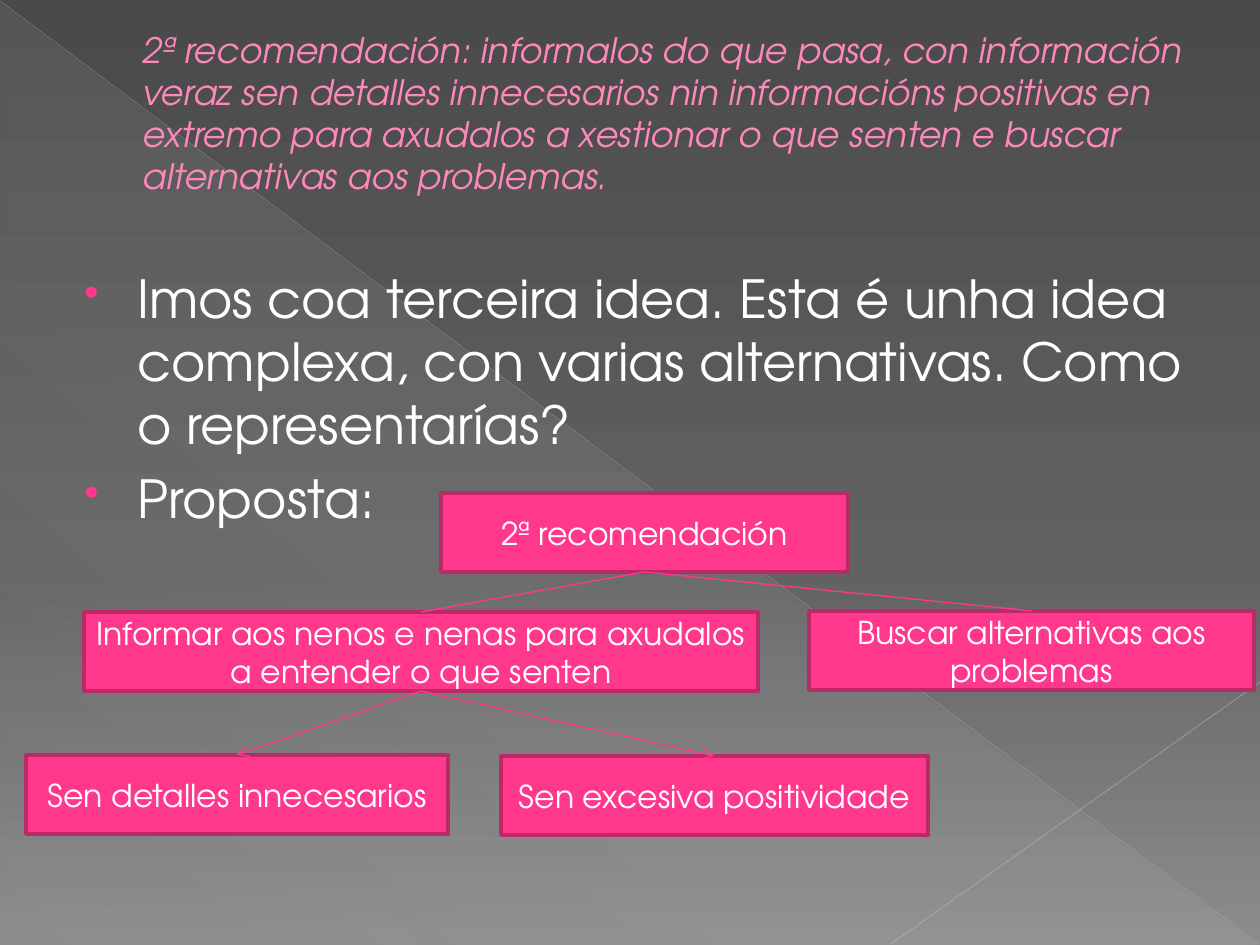
from lxml import etree
from pptx import Presentation
from pptx.dml.color import RGBColor
from pptx.enum.shapes import MSO_CONNECTOR, MSO_SHAPE
from pptx.enum.text import MSO_ANCHOR, PP_ALIGN
from pptx.oxml import parse_xml
from pptx.oxml.ns import nsdecls, qn
from pptx.util import Emu, Pt

RECT, TRI = MSO_SHAPE.RECTANGLE, MSO_SHAPE.RIGHT_TRIANGLE
LINE = MSO_CONNECTOR.STRAIGHT
MID, TOP = MSO_ANCHOR.MIDDLE, MSO_ANCHOR.TOP
LEFT, CENTER = PP_ALIGN.LEFT, PP_ALIGN.CENTER

WHITE = RGBColor(0xFF, 0xFF, 0xFF)
PINK = RGBColor(0xFF, 0x38, 0x8C)
ROSE = RGBColor(0xFF, 0x88, 0xBA)
EDGE = RGBColor(0xBD, 0x29, 0x68)
DARK = RGBColor(0x4A, 0x4A, 0x4A)
GRAY = RGBColor(0x62, 0x62, 0x62)
PALE = RGBColor(0x8C, 0x8C, 0x8C)
SHEEN = RGBColor(0xD2, 0xD2, 0xD2)
RAY1 = RGBColor(0xBF, 0xBF, 0xBF)
RAY2 = RGBColor(0xC6, 0xC6, 0xC6)

FONT = "TeX Gyre Adventor"
SCALE = 914400 / 126
BOX_H = 79

TITLE = ("2ª recomendación: informalos do que pasa, con información veraz "
         "sen detalles innecesarios nin informacións positivas en extremo "
         "para axudalos a xestionar o que senten e buscar alternativas aos "
         "problemas.")
IDEAS = ["Imos coa terceira idea. Esta é unha idea complexa, con varias "
         "alternativas. Como o representarías?",
         "Proposta:"]

# name: (left, top, width, text)
NODES = {
    "root": (441, 493, 407, "2ª recomendación"),
    "inform": (84, 612, 674,
               "Informar aos nenos e nenas para axudalos a entender o que senten"),
    "detail": (26, 755, 422, "Sen detalles innecesarios"),
    "upbeat": (501, 756, 427, "Sen excesiva positividade"),
    "search": (809, 611, 445, "Buscar alternativas aos problemas"),
}
# from, to, arrowhead
LINKS = [("root", "inform", False), ("inform", "detail", True),
         ("inform", "upbeat", True), ("root", "search", False)]


def px(*vals):
    return [Emu(round(v * SCALE)) for v in vals]


def put(obj, **vals):
    for key, val in vals.items():
        setattr(obj, key, val)


def shade(item, stops, angle):
    """Swap the solid fill of an element for a gradient of (pos, colour, alpha)."""
    marks = "".join(
        f'<a:gs pos="{pos * 1000}"><a:srgbClr val="{color}">'
        f'<a:alpha val="{alpha * 1000}"/></a:srgbClr></a:gs>'
        for pos, color, alpha in stops)
    grad = parse_xml(
        f'<a:gradFill {nsdecls("a")} rotWithShape="1"><a:gsLst>{marks}</a:gsLst>'
        f'<a:lin ang="{angle * 60000}" scaled="0"/></a:gradFill>')
    solid = next(item.iter(qn("a:solidFill")))
    solid.getparent().replace(solid, grad)


def add_line(slide, ends, color, width, alpha=100, arrow=False):
    line = slide.shapes.add_connector(LINE, *px(*ends))
    line.line.color.rgb = color
    line.line.width = Pt(width)
    props = line.element.spPr
    if alpha < 100:
        tint = next(props.iter(qn("a:srgbClr")))
        etree.SubElement(tint, qn("a:alpha"), val=str(alpha * 1000))
    if arrow:
        etree.SubElement(props.find(qn("a:ln")), qn("a:tailEnd"), type="arrow")
    etree.SubElement(props, qn("a:effectLst"))
    return line


def add_backdrop(slide):
    slide.background.fill.solid()
    shade(slide.element, [(0, DARK, 100), (60, GRAY, 100), (100, PALE, 100)], 90)
    tri = slide.shapes.add_shape(TRI, *px(1, 3, 1257, 942))
    tri.shadow.inherit = False
    tri.fill.solid()
    shade(tri.element, [(0, SHEEN, 10), (70, SHEEN, 8), (100, SHEEN, 1)], 133)
    tri.line.fill.background()
    add_line(slide, (0, 1, 1259, 944), RAY1, 0.39, 35)
    add_line(slide, (1260, 682, 891, 944), RAY2, 0.47, 45)


def write(para, text, size, color, align=LEFT, italic=False):
    para.alignment = align
    para.text = text
    put(para.font, name=FONT, size=Pt(size), italic=italic)
    para.font.color.rgb = color


def indent(para, left, first=0):
    props = para._p.get_or_add_pPr()
    for key, val in zip(("marL", "indent"), px(left, first)):
        props.set(key, str(val))
    return props


def add_bullet(para):
    props = indent(para, 62, -53)
    tint = etree.SubElement(props, qn("a:buClr"))
    etree.SubElement(tint, qn("a:srgbClr"), val=str(PINK))
    etree.SubElement(props, qn("a:buSzPct"), val="80000")
    etree.SubElement(props, qn("a:buChar"), char="•")


def add_title(slide):
    frame = slide.shapes.add_textbox(*px(63, 37, 1134, 193)).text_frame
    put(frame, word_wrap=True, vertical_anchor=MID,
        margin_top=0, margin_bottom=px(43)[0])
    para = frame.paragraphs[0]
    indent(para, 67)
    write(para, TITLE, 20, ROSE, italic=True)


def add_ideas(slide):
    frame = slide.shapes.add_textbox(*px(63, 260, 1134, 630)).text_frame
    put(frame, word_wrap=True, vertical_anchor=TOP)
    for num, text in enumerate(IDEAS):
        para = frame.add_paragraph() if num else frame.paragraphs[0]
        if num:
            para.space_before = Pt(6)
        add_bullet(para)
        write(para, text, 30, WHITE)


def add_node(slide, left, top, width, text):
    node = slide.shapes.add_shape(RECT, *px(left, top, width, BOX_H))
    node.shadow.inherit = False
    node.fill.solid()
    node.fill.fore_color.rgb = PINK
    node.line.color.rgb = EDGE
    node.line.width = Pt(2)
    put(node.text_frame, word_wrap=True, vertical_anchor=MID)
    write(node.text_frame.paragraphs[0], text, 18, WHITE, CENTER)
    return node


def add_tree(slide):
    nodes = {name: add_node(slide, *spec_row) for name, spec_row in NODES.items()}
    for start, end, arrow in LINKS:
        line = add_line(slide, (0, 0, 0, 0), PINK, 0.75, arrow=arrow)
        line.begin_connect(nodes[start], 2)
        line.end_connect(nodes[end], 0)


def main():
    prs = Presentation()
    prs.slide_width, prs.slide_height = px(1260, 945)
    slide = prs.slides.add_slide(prs.slide_layouts[6])
    add_backdrop(slide)
    add_title(slide)
    add_ideas(slide)
    add_tree(slide)
    prs.save("out.pptx")


if __name__ == "__main__":
    main()
